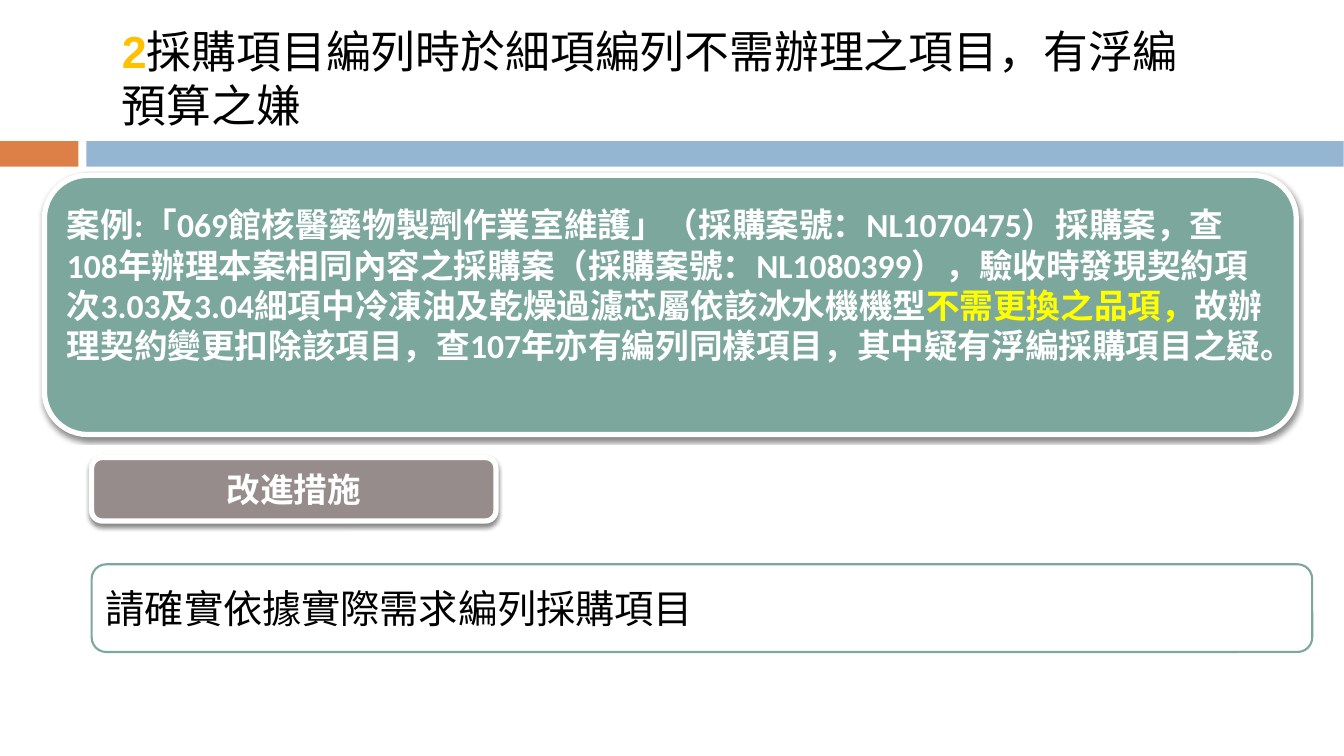
from lxml.etree import SubElement
from pptx import Presentation
from pptx.dml.color import RGBColor
from pptx.enum.shapes import MSO_SHAPE
from pptx.enum.text import MSO_ANCHOR, MSO_AUTO_SIZE, PP_ALIGN
from pptx.oxml import parse_xml
from pptx.oxml.ns import nsdecls, qn
from pptx.util import Cm, Pt

ORANGE = RGBColor(0xDD, 0x80, 0x47)
BLUE = RGBColor(0x94, 0xB6, 0xD2)
GREEN = RGBColor(0x7B, 0xA7, 0x9D)
TAUPE = RGBColor(0x96, 0x8C, 0x8C)
GOLD = RGBColor(0xFF, 0xC0, 0x00)
YELLOW = RGBColor(0xFF, 0xFF, 0x00)
WHITE = RGBColor(0xFF, 0xFF, 0xFF)
BLACK = RGBColor(0, 0, 0)

# Text formats
NUMBER = dict(name="Arial", size=Pt(32), bold=True)
HEADING = dict(name="Noto Sans CJK SC", size=Pt(32), bold=False)
STRONG = dict(name="Calibri", size=Pt(24), bold=True)
ADVICE = dict(name="Noto Sans CJK SC", size=Pt(28), bold=False)

# Content: runs are (text, format, colour)
TITLE = [("2", NUMBER, GOLD),
         ("採購項目編列時於細項編列不需辦理之項目，有浮編預算之嫌", HEADING, BLACK)]
CASE = [("案例:「069館核醫藥物製劑作業室維護」（採購案號：NL1070475）採購案，"
         "查108年辦理本案相同內容之採購案（採購案號：NL1080399），"
         "驗收時發現契約項次3.03及3.04細項中冷凍油及乾燥過濾芯屬依該冰水機機型",
         STRONG, WHITE),
        ("不需更換之品項，", STRONG, YELLOW),
        ("故辦理契約變更扣除該項目，查107年亦有編列同樣項目，"
         "其中疑有浮編採購項目之疑。", STRONG, WHITE)]
MEASURE = [("改進措施", STRONG, WHITE)]
ACTION = [("請確實依據實際需求編列採購項目", ADVICE, BLACK)]

# Bars: left, width, colour
BARS = [(0, 1.98, ORANGE), (2.18, 31.68, BLUE)]
# Boxes: left, top, width, height, fill, line, line width, shadow, align, runs, bottom inset
BOXES = [
    (1.12, 4.42, 31.55, 6.53, GREEN, WHITE, 3.75, True, PP_ALIGN.LEFT, CASE, 1.14),
    (2.31, 14.22, 30.76, 2.21, WHITE, GREEN, 1.5, False, PP_ALIGN.LEFT, ACTION, 0.13),
    (2.31, 11.53, 10.19, 1.6, TAUPE, WHITE, 3.75, True, PP_ALIGN.CENTER, MEASURE, 0.13),
]


def write(tf, runs, align, anchor):
    tf.word_wrap = True
    tf.auto_size = MSO_AUTO_SIZE.NONE
    tf.vertical_anchor = anchor
    p = tf.paragraphs[0]
    p.alignment = align
    for text, style, colour in runs:
        r = p.add_run()
        r.text = text
        for key, value in style.items():
            setattr(r.font, key, value)
        r.font.color.rgb = colour
        # East Asian typeface, which sets the line height
        SubElement(r.font._element, qn("a:ea")).set("typeface", "Calibri")


def add_panel(kind, left, top, width, height, fill):
    sp = s.shapes.add_shape(kind, Cm(left), Cm(top), Cm(width), Cm(height))
    sp.shadow.inherit = False
    sp.fill.solid()
    sp.fill.fore_color.rgb = fill
    sp.line.fill.background()
    return sp


def add_shadow(sp):
    effects = sp._element.spPr.find(qn("a:effectLst"))
    effects.append(parse_xml(
        f'<a:outerShdw {nsdecls("a")} blurRad="{Pt(3)}" dist="{Pt(2.4)}" dir="5400000" '
        'rotWithShape="0"><a:srgbClr val="000000"><a:alpha val="45000"/></a:srgbClr>'
        '</a:outerShdw>'))


prs = Presentation()
prs.slide_width, prs.slide_height = Cm(33.87), Cm(19.05)
s = prs.slides.add_slide(prs.slide_layouts[5])

# Title
title = s.shapes.title
title.left, title.top, title.width, title.height = Cm(2.82), Cm(0.48), Cm(28.17), Cm(3)
write(title.text_frame, TITLE, PP_ALIGN.LEFT, MSO_ANCHOR.TOP)

# Bars under the title
for left, width, colour in BARS:
    add_panel(MSO_SHAPE.RECTANGLE, left, 3.56, width, 0.64, colour)

# Rounded boxes
for left, top, width, height, fill, line, weight, shadow, align, runs, inset in BOXES:
    sp = add_panel(MSO_SHAPE.ROUNDED_RECTANGLE, left, top, width, height, fill)
    sp.line.color.rgb = line
    sp.line.width = Pt(weight)
    if shadow:
        add_shadow(sp)
    sp.text_frame.margin_bottom = Cm(inset)
    write(sp.text_frame, runs, align, MSO_ANCHOR.MIDDLE)

prs.save("out.pptx")
